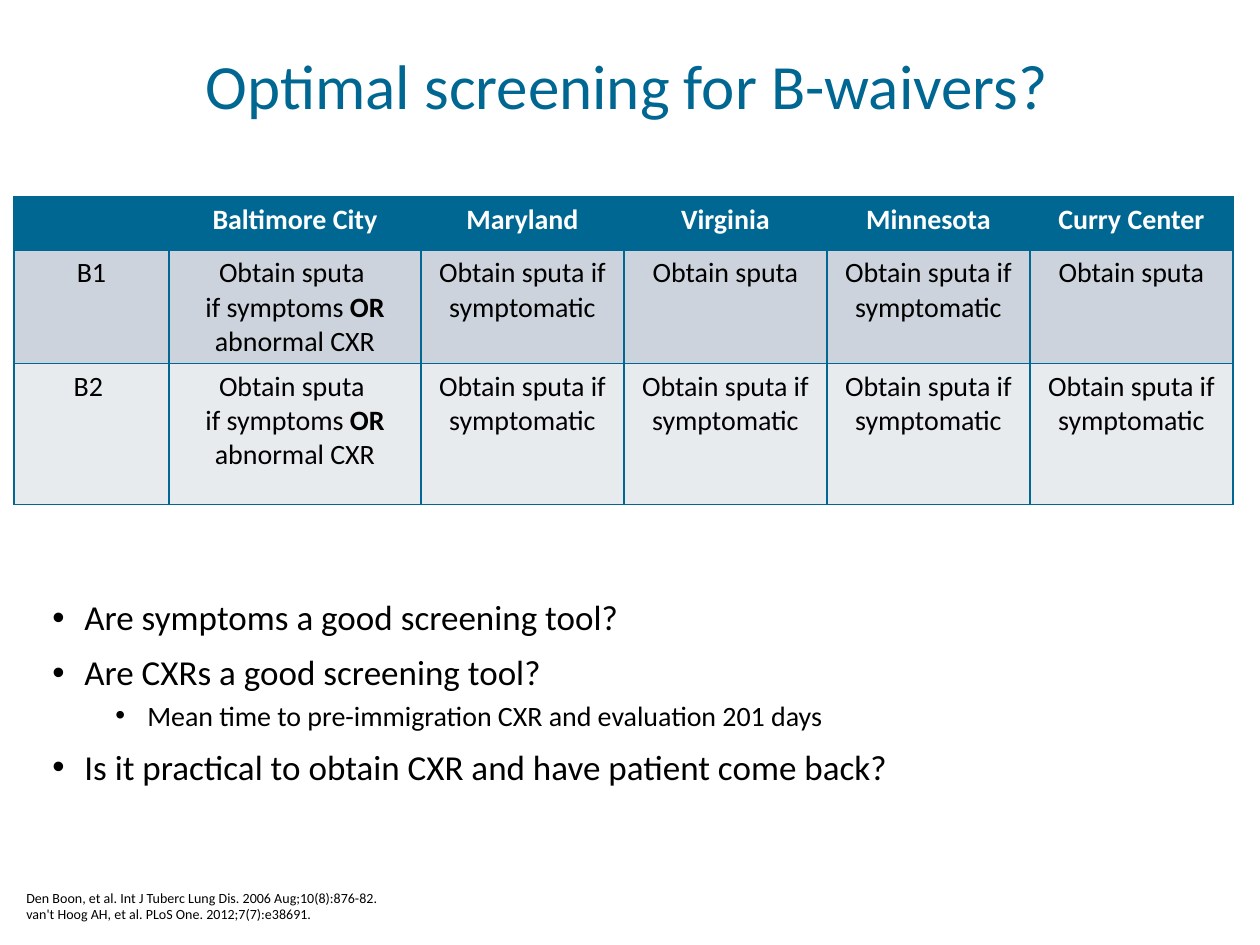
from dataclasses import dataclass

from lxml import etree
from pptx import Presentation
from pptx.dml.color import RGBColor
from pptx.enum.text import MSO_ANCHOR, PP_ALIGN
from pptx.oxml.ns import qn
from pptx.util import Pt

LEFT, CENTER = PP_ALIGN.LEFT, PP_ALIGN.CENTER
TOP, BOTTOM = MSO_ANCHOR.TOP, MSO_ANCHOR.BOTTOM

TEAL = RGBColor(0x00, 0x67, 0x92)
BLACK = RGBColor(0x00, 0x00, 0x00)
WHITE = RGBColor(0xFF, 0xFF, 0xFF)
GRAY_BLUE = RGBColor(0xCC, 0xD3, 0xDC)
PALE_BLUE = RGBColor(0xE7, 0xEB, 0xEE)

FONT = "Calibri"
PX_PER_INCH = 126
BOLD_MARK = "*"


@dataclass
class Box:
    left: int
    top: int
    width: int
    height: int


@dataclass
class Bullet:
    text: str
    size: int = 20
    level: int = 0
    indent: int = 32
    space: int = 10


@dataclass
class Row:
    height: int
    fill: RGBColor
    color: RGBColor
    bold: bool
    texts: list[str]


SYMPTOMS_OR_CXR = "Obtain sputa \nif symptoms *OR* abnormal CXR"
IF_SYMPTOMATIC = "Obtain sputa if symptomatic"
ALWAYS = "Obtain sputa"

COLUMN_WIDTHS = [155, 252] + [203] * 4
ROWS = [
    Row(53, TEAL, WHITE, True,
        ["", "Baltimore City", "Maryland", "Virginia", "Minnesota", "Curry Center"]),
    Row(113, GRAY_BLUE, BLACK, False,
        ["B1", SYMPTOMS_OR_CXR, IF_SYMPTOMATIC, ALWAYS, IF_SYMPTOMATIC, ALWAYS]),
    Row(141, PALE_BLUE, BLACK, False, ["B2 ", SYMPTOMS_OR_CXR] + [IF_SYMPTOMATIC] * 4),
]
QUESTIONS = [
    Bullet("Are symptoms a good screening tool?", space=0),
    Bullet("Are CXRs a good screening tool?"),
    Bullet("Mean time to pre-immigration CXR and evaluation 201 days",
           size=16, level=1, indent=95, space=5),
    Bullet("Is it practical to obtain CXR and have patient come back?"),
]
CITATIONS = ("Den Boon, et al. Int J Tuberc Lung Dis. 2006 Aug;10(8):876-82.\n"
             "van't Hoog AH, et al. PLoS One. 2012;7(7):e38691.")


def px(length: int) -> int:
    return round(length * 914400 / PX_PER_INCH)


def place(box: Box) -> tuple[int, int, int, int]:
    return px(box.left), px(box.top), px(box.width), px(box.height)


def write_runs(paragraph, text: str, *, size: int, color: RGBColor = BLACK,
               bold: bool = False, align=LEFT) -> None:
    paragraph.alignment = align
    paragraph.font.size = Pt(size)
    for index, part in enumerate(text.split(BOLD_MARK)):
        if part:
            run = paragraph.add_run()
            run.text = part
            run.font.name = FONT
            run.font.size = Pt(size)
            run.font.bold = bold or index % 2 == 1
            run.font.color.rgb = color


def write_text(frame, text: str, **style) -> None:
    for index, line in enumerate(text.split("\n")):
        paragraph = frame.add_paragraph() if index else frame.paragraphs[0]
        write_runs(paragraph, line, **style)


def add_frame(slide, box: Box, anchor=TOP):
    frame = slide.shapes.add_textbox(*place(box)).text_frame
    frame.word_wrap = True
    frame.vertical_anchor = anchor
    return frame


def add_bullets(slide, box: Box, bullets: list[Bullet]) -> None:
    frame = add_frame(slide, box)
    for index, bullet in enumerate(bullets):
        paragraph = frame.add_paragraph() if index else frame.paragraphs[0]
        paragraph.level = bullet.level
        properties = paragraph._p.get_or_add_pPr()
        properties.set("marL", str(px(bullet.indent)))
        properties.set("indent", str(-px(32)))
        etree.SubElement(properties, qn("a:buFont"), typeface="Arial")
        etree.SubElement(properties, qn("a:buChar"), char="•")
        paragraph.line_spacing = 0.9
        paragraph.space_before = Pt(bullet.space)
        write_runs(paragraph, bullet.text, size=bullet.size)


def outline_cell(cell, color: RGBColor) -> None:
    properties = cell._tc.get_or_add_tcPr()
    for index, side in enumerate(("a:lnL", "a:lnR", "a:lnT", "a:lnB")):
        border = etree.Element(qn(side), w=str(Pt(1)))
        fill = etree.SubElement(border, qn("a:solidFill"))
        etree.SubElement(fill, qn("a:srgbClr"), val=str(color))
        properties.insert(index, border)


def add_screening_table(slide, box: Box, rows: list[Row], widths: list[int]) -> None:
    table = slide.shapes.add_table(len(rows), len(widths), *place(box)).table
    for column, width in zip(table.columns, widths):
        column.width = px(width)
    for table_row, row in zip(table.rows, rows):
        table_row.height = px(row.height)
        for cell, text in zip(table_row.cells, row.texts):
            cell.fill.solid()
            cell.fill.fore_color.rgb = row.fill
            outline_cell(cell, TEAL)
            write_text(cell.text_frame, text, size=16, color=row.color,
                       bold=row.bold, align=CENTER)


def main() -> None:
    presentation = Presentation()
    presentation.slide_width = px(1260)
    presentation.slide_height = px(945)
    slide = presentation.slides.add_slide(presentation.slide_layouts[6])

    title = add_frame(slide, Box(44, 32, 1166, 97), BOTTOM)
    write_text(title, "Optimal screening for B-waivers?", size=36, color=TEAL, align=CENTER)
    title.paragraphs[0].line_spacing = 0.9

    add_bullets(slide, Box(40, 594, 1166, 311), QUESTIONS)
    write_text(add_frame(slide, Box(14, 883, 629, 47)), CITATIONS, size=8)

    table_box = Box(14, 197, sum(COLUMN_WIDTHS), sum(row.height for row in ROWS))
    add_screening_table(slide, table_box, ROWS, COLUMN_WIDTHS)
    presentation.save("out.pptx")


if __name__ == "__main__":
    main()
